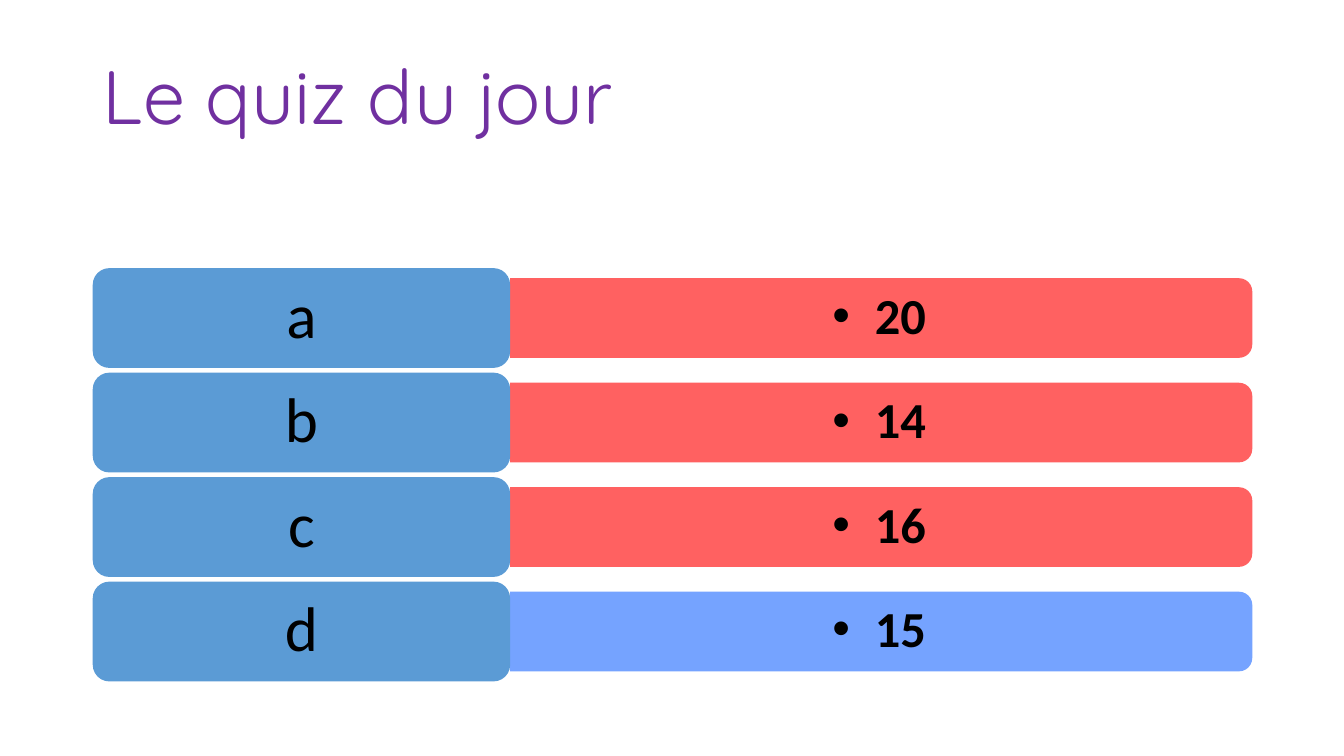
from lxml import etree
from pptx import Presentation
from pptx.dml.color import RGBColor
from pptx.enum import shapes, text
from pptx.oxml import ns
from pptx.util import Inches, Pt

COLORS = {"title": "7030A0", "label": "5B9BD5", "wrong": "FF5050",
          "right": "6699FF", "text": "000000"}
ANSWERS = [("a", "20", "wrong"), ("b", "14", "wrong"),
           ("c", "16", "wrong"), ("d", "15", "right")]
TITLE_FONT = {"name": "Quicksand", "size": Pt(54), "bold": False}
LABEL_FONT = {"name": "Calibri", "size": Pt(45), "bold": False}
VALUE_FONT = {"name": "Calibri", "size": Pt(36), "bold": True}
LABEL_W, LABEL_H, BAR_H = 4.14, 0.99, 0.79


def add_part(parent, tag, **attrs):
    """Append a DrawingML element with the given attributes."""
    part = etree.SubElement(parent, ns.qn(tag))
    for name, value in attrs.items():
        part.set(name, value)
    return part


def write(sp, words, font, color, align):
    """Put one formatted paragraph in a shape and return it."""
    tf = sp.text_frame
    frame = {"word_wrap": True, "auto_size": text.MSO_AUTO_SIZE.NONE,
             "vertical_anchor": text.MSO_ANCHOR.MIDDLE}
    for name, value in frame.items():
        setattr(tf, name, value)
    p = tf.paragraphs[0]
    p.alignment, p.line_spacing = align, 0.9
    r = p.add_run()
    r.text = words
    for name, value in font.items():
        setattr(r.font, name, value)
    r.font.color.rgb = RGBColor.from_string(COLORS[color])
    return p


def add_block(s, kind, box, color):
    """Draw a filled preset shape without outline or shadow."""
    sp = s.shapes.add_shape(kind, *map(Inches, box))
    sp.shadow.inherit = False
    sp.fill.solid()
    sp.fill.fore_color.rgb = RGBColor.from_string(COLORS[color])
    sp.line.fill.background()
    return sp


def add_title(s, box):
    """Place and fill the title placeholder."""
    sp = s.shapes.title
    sp.left, sp.top, sp.width, sp.height = map(Inches, box)
    write(sp, "Le quiz du jour", TITLE_FONT, "title", text.PP_ALIGN.LEFT)


def add_bar(s, box, value, color):
    """Draw a bar rounded on its right side, with its bulleted value."""
    x, y, w, h = box
    upright = (x + (w - h) / 2, y + (h - w) / 2, h, w)
    bar = add_block(s, shapes.MSO_SHAPE.ROUND_2_SAME_RECTANGLE, upright, color)
    bar.rotation = 90
    rgb = bar.fill._xPr.find(".//" + ns.qn("a:srgbClr"))
    add_part(rgb, "a:alpha", val="90000")
    sp = s.shapes.add_textbox(*map(Inches, (x, y + 0.04, w - 0.04, h - 0.08)))
    tf = sp.text_frame
    tf.margin_left = tf.margin_right = Inches(0.15)
    tf.margin_top = tf.margin_bottom = Inches(0.07)
    p = write(sp, " " + value, VALUE_FONT, "text", text.PP_ALIGN.CENTER)
    p.level = 1
    pPr = p._p.get_or_add_pPr()
    pPr.set("marL", str(Inches(0.31)))
    pPr.set("indent", str(-Inches(0.31)))
    add_part(pPr, "a:buFont", typeface="Arial")
    add_part(pPr, "a:buChar", char="•")


def add_answers(s, box):
    """Stack the answer rows evenly over the box."""
    x, y, w, h = box
    step = (h - LABEL_H) / (len(ANSWERS) - 1)
    for i, (letter, value, color) in enumerate(ANSWERS):
        top = y + i * step
        bar_top = top + (LABEL_H - BAR_H) / 2
        add_bar(s, (x + LABEL_W, bar_top, w - LABEL_W, BAR_H), value, color)
        label = add_block(s, shapes.MSO_SHAPE.ROUNDED_RECTANGLE,
                          (x, top, LABEL_W, LABEL_H), "label")
        write(label, letter, LABEL_FONT, "text", text.PP_ALIGN.CENTER)


def main():
    """Build the quiz slide and save it."""
    prs = Presentation()
    prs.slide_width, prs.slide_height = Inches(13.33), Inches(7.5)
    s = prs.slides.add_slide(prs.slide_layouts[5])
    add_title(s, (0.92, 0.27, 11.5, 1.45))
    add_answers(s, (0.92, 2.66, 11.5, 4.1))
    prs.save("out.pptx")


if __name__ == "__main__":
    main()
